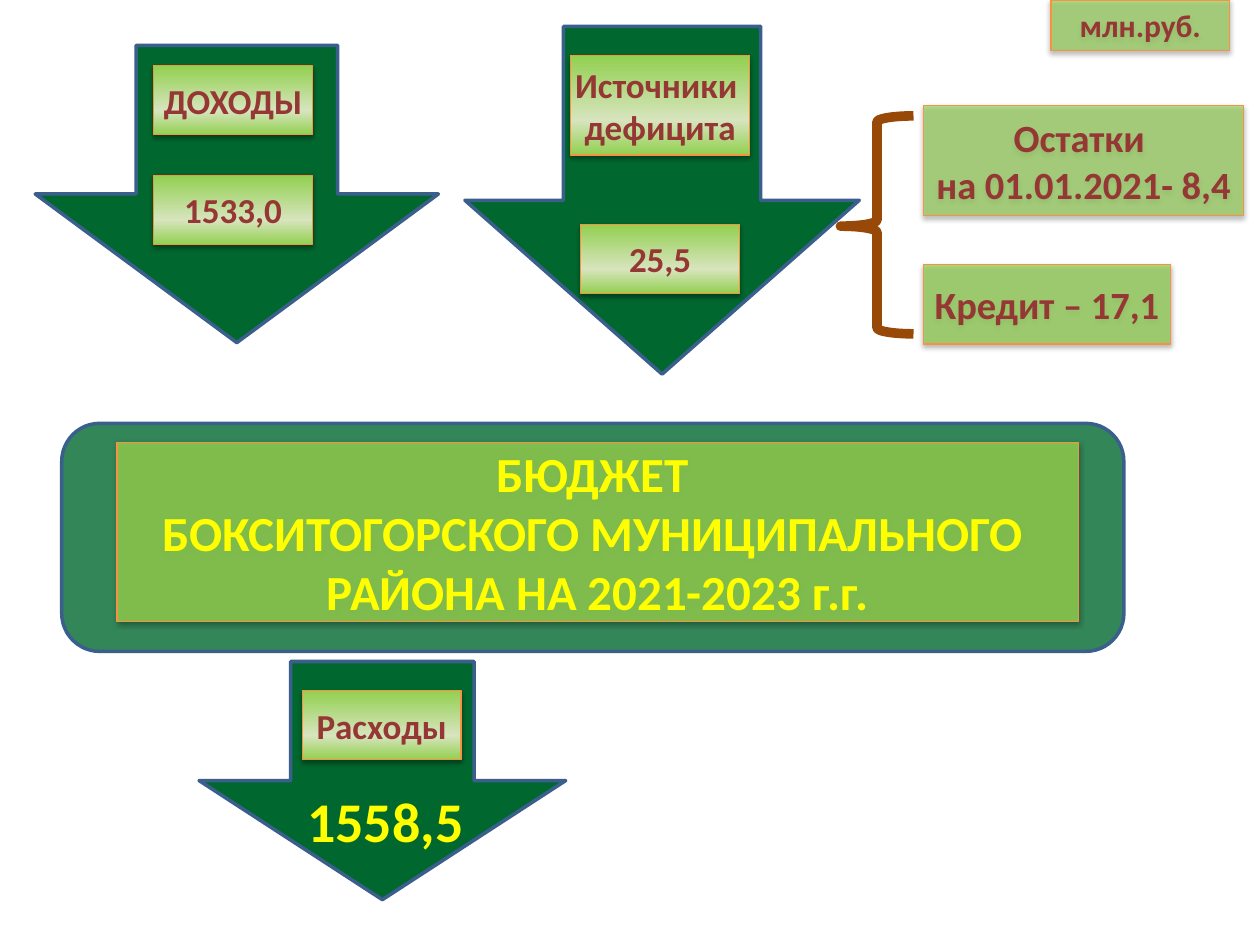
from copy import deepcopy
from lxml import etree
from pptx import Presentation
from pptx.dml.color import RGBColor
from pptx.enum import shapes, text
from pptx.oxml import ns
from pptx.util import Inches, Pt

COLOURS = {
    "arrow": "00682F", "outline": "3A5F8C", "lime": "92D050", "pale": "D7E4BD",
    "orange": "F69240", "brown": "984807", "maroon": "953735", "yellow": "FFFF00",
    "shadow": "000000",
}
KIND = shapes.MSO_SHAPE


def add_figure(kind, place, fill, line, width, opacity=100):
    """Add a preset shape with a plain fill, an outline and no shadow."""
    figure = page.shapes.add_shape(kind, *[Inches(value) for value in place])
    figure.shadow.inherit = False
    if fill:
        figure.fill.solid()
        figure.fill.fore_color.rgb = RGBColor.from_string(COLOURS[fill])
        if opacity < 100:
            colour = figure._element.spPr.find(".//" + ns.qn("a:srgbClr"))
            etree.SubElement(colour, ns.qn("a:alpha"), val=str(opacity * 1000))
    else:
        figure.fill.background()
    figure.line.color.rgb = RGBColor.from_string(COLOURS[line])
    figure.line.width = Pt(width)
    return figure


def write(box, lines, size, colour, anchor=text.MSO_ANCHOR.MIDDLE, wrap=False):
    """Write centred bold lines, one paragraph each."""
    frame = box.text_frame
    frame.word_wrap = wrap
    frame.vertical_anchor = anchor
    frame.text = "\n".join(lines)
    for para in frame.paragraphs:
        para.alignment = text.PP_ALIGN.CENTER
        para.font.name = "Calibri"
        para.font.size = Pt(size)
        para.font.bold = True
        para.font.color.rgb = RGBColor.from_string(COLOURS[colour])


deck = Presentation()
deck.slide_width, deck.slide_height = Inches(10), Inches(7.5)
page = deck.slides.add_slide(deck.slide_layouts[6])

# Budget panel, the three arrows and the brace
add_figure(KIND.ROUNDED_RECTANGLE, (0.49, 3.36, 8.43, 1.81), "arrow", "outline", 2, 80)
for place in [(0.28, 0.36, 3.2, 2.36), (1.58, 5.25, 2.91, 1.89), (3.69, 0.21, 3.13, 2.76)]:
    add_figure(KIND.DOWN_ARROW, place, "arrow", "outline", 2)
brace = add_figure(KIND.LEFT_BRACE, (6.67, 0.92, 0.58, 1.73), None, "brown", 5.5)
brace.adjustments[0], brace.adjustments[1] = 0.083, 0.506

# Labels: place, lines, size, colour, opacity (None means gradient)
labels = [
    ((1.22, 0.52, 1.26, 0.55), ["ДОХОДЫ"], 20, "maroon", None),
    ((1.22, 1.39, 1.26, 0.55), ["1533,0"], 20, "maroon", None),
    ((4.53, 0.44, 1.42, 0.79), ["Источники ", "дефицита"], 20, "maroon", None),
    ((4.61, 1.78, 1.26, 0.55), ["25,5"], 20, "maroon", None),
    ((2.4, 5.48, 1.26, 0.55), ["Расходы"], 20, "maroon", None),
    ((0.93, 3.51, 7.63, 1.42),
     ["БЮДЖЕТ ", "БОКСИТОГОРСКОГО МУНИЦИПАЛЬНОГО ", "РАЙОНА НА 2021-2023 г.г."],
     28, "yellow", 83),
    ((7.33, 0.84, 2.54, 0.87), ["Остатки ", "на 01.01.2021- 8,4"], 22, "maroon", 63),
    ((7.33, 2.1, 1.96, 0.63), ["Кредит – 17,1"], 22, "maroon", 71),
    ((8.34, 0, 1.42, 0.4), ["млн.руб."], 18, "maroon", 63),
]
for place, lines, size, colour, opacity in labels:
    kind = KIND.RECTANGLE if lines == ["млн.руб."] else KIND.FLOWCHART_PROCESS
    box = add_figure(kind, place, "lime", "orange", 0.75, opacity or 100)
    properties = box._element.spPr

    # Lime gradient with a pale band, running upwards
    if opacity is None:
        box.fill.gradient()
        box.fill.gradient_angle = 90
        stop_list = properties.find(".//" + ns.qn("a:gsLst"))
        stop_list.append(deepcopy(stop_list[-1]))
        stops = [(0, "lime"), (0.35, "pale"), (1, "lime")]
        for stop, (position, shade) in zip(box.fill.gradient_stops, stops):
            stop.position = position
            stop.color.rgb = RGBColor.from_string(COLOURS[shade])

    # Soft shadow below
    effects = properties.find(ns.qn("a:effectLst"))
    shadow = etree.SubElement(effects, ns.qn("a:outerShdw"), blurRad=str(Pt(3.1)),
                              dist=str(Pt(1.6)), dir="5400000", rotWithShape="0")
    tint = etree.SubElement(shadow, ns.qn("a:srgbClr"), val=COLOURS["shadow"])
    etree.SubElement(tint, ns.qn("a:alpha"), val="38000")
    write(box, lines, size, colour)

# Total spending
total = page.shapes.add_textbox(Inches(2.31), Inches(6.19), Inches(1.5), Inches(0.64))
write(total, ["1558,5"], 32, "yellow", text.MSO_ANCHOR.TOP, True)

deck.save("out.pptx")
